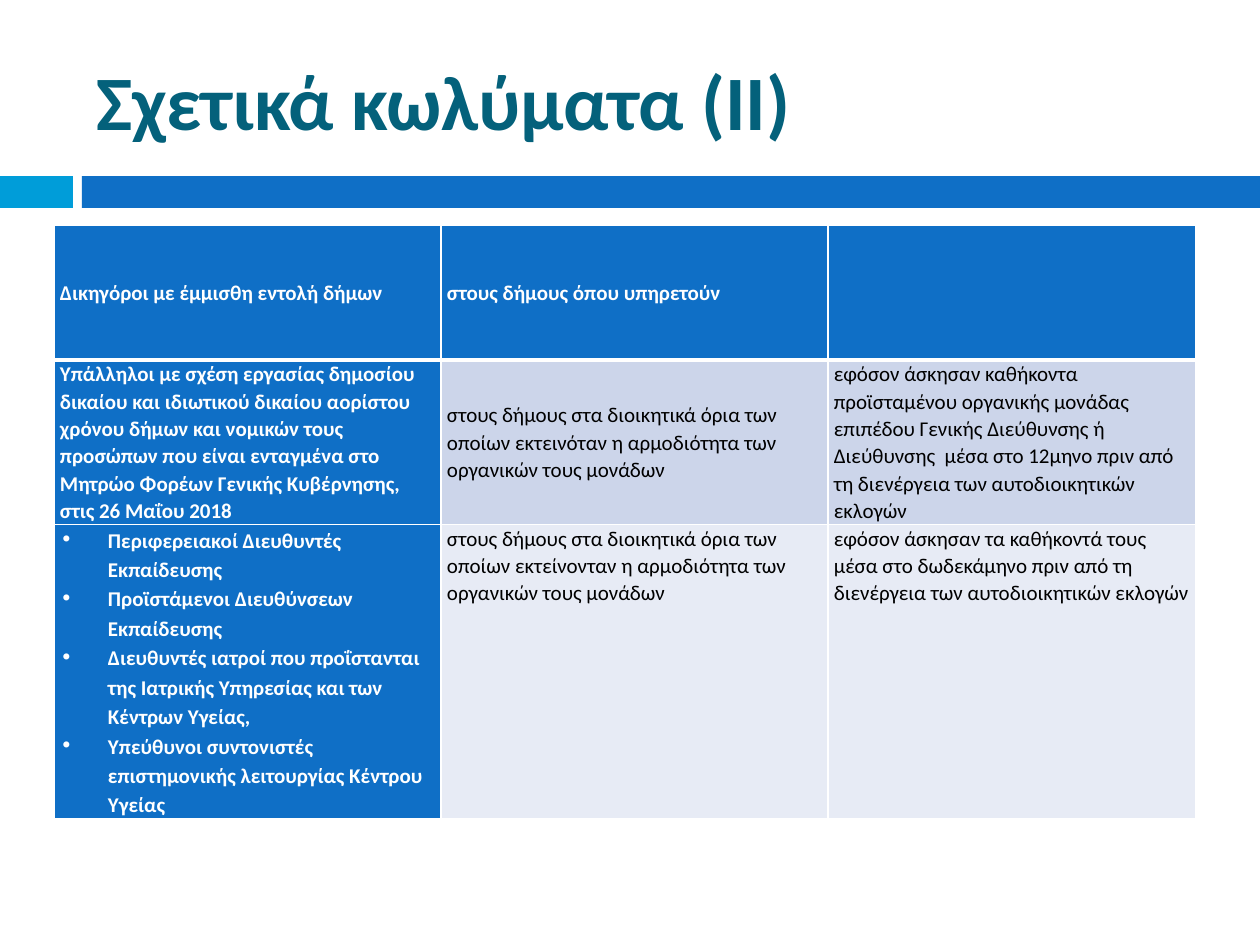
"""Build the slide on eligibility restrictions with its three-column table."""
import dataclasses
import typing

import lxml.etree
import pptx
import pptx.dml.color
import pptx.enum.shapes
import pptx.enum.text
import pptx.oxml.ns
import pptx.util

PX_PER_INCH = 126
FONT = "Calibri"
COLORS = {
    "title": "04617B", "accent": "009DD9", "main": "0F6FC6", "white": "FFFFFF",
    "text": "000000", "band": "CCD5EA", "light": "E7EBF5",
}
ANCHOR = pptx.enum.text.MSO_ANCHOR
COLUMNS = (387, 387, 368)
ROWS = (135, 161, 290)
INSET = 6
INDENT = 48


@dataclasses.dataclass(frozen=True)
class Bar:
    left: int
    width: int
    color: str


@dataclasses.dataclass(frozen=True)
class Entry:
    lines: tuple[str, ...]
    fill: str = "main"
    color: str = "white"
    bold: bool = True
    middle: bool = False
    bullets: bool = False


BARS = (Bar(0, 73, "accent"), Bar(82, 1178, "main"))
ENTRIES = (
    (
        Entry(("Δικηγόροι με έμμισθη εντολή δήμων",), middle=True),
        Entry(("στους δήμους όπου υπηρετούν",), middle=True),
        Entry(()),
    ),
    (
        Entry(("Υπάλληλοι με σχέση εργασίας δημοσίου δικαίου και ιδιωτικού δικαίου "
               "αορίστου χρόνου δήμων και νομικών τους προσώπων που είναι ενταγμένα στο "
               "Μητρώο Φορέων Γενικής Κυβέρνησης, στις 26 Μαΐου 2018",)),
        Entry(("στους δήμους στα διοικητικά όρια των οποίων εκτεινόταν η αρμοδιότητα "
               "των οργανικών τους μονάδων",), "band", "text", False, middle=True),
        Entry(("εφόσον άσκησαν καθήκοντα προϊσταμένου οργανικής μονάδας επιπέδου "
               "Γενικής Διεύθυνσης ή Διεύθυνσης  μέσα στο 12μηνο πριν από τη διενέργεια "
               "των αυτοδιοικητικών εκλογών",), "band", "text", False),
    ),
    (
        Entry(("Περιφερειακοί Διευθυντές Εκπαίδευσης",
               "Προϊστάμενοι Διευθύνσεων Εκπαίδευσης",
               "Διευθυντές ιατροί που προΐστανται της Ιατρικής Υπηρεσίας και των "
               "Κέντρων Υγείας,",
               "Υπεύθυνοι συντονιστές επιστημονικής λειτουργίας Κέντρου Υγείας"),
              bullets=True),
        Entry(("στους δήμους στα διοικητικά όρια των οποίων εκτείνονταν η αρμοδιότητα "
               "των οργανικών τους μονάδων",), "light", "text", False),
        Entry(("εφόσον άσκησαν τα καθήκοντά τους μέσα στο δωδεκάμηνο πριν από τη "
               "διενέργεια των αυτοδιοικητικών εκλογών",), "light", "text", False),
    ),
)


def px(length: int) -> pptx.util.Emu:
    return pptx.util.Emu(round(length * 914400 / PX_PER_INCH))


def rgb(name: str) -> pptx.dml.color.RGBColor:
    return pptx.dml.color.RGBColor.from_string(COLORS[name])


def add_element(parent: typing.Any, tag: str, **attributes: str) -> typing.Any:
    return lxml.etree.SubElement(parent, pptx.oxml.ns.qn(tag), attributes)


def add_span(para: typing.Any, text: str, size: int, color: str, bold: bool) -> None:
    span = para.add_run()
    span.text = text
    span.font.name = FONT
    span.font.size = pptx.util.Pt(size)
    span.font.bold = bold
    span.font.color.rgb = rgb(color)


def add_title(page: typing.Any, text: str) -> None:
    title = page.shapes.title
    title.left, title.top, title.width, title.height = map(px, (84, 32, 1124, 136))
    title.text_frame.vertical_anchor = ANCHOR.MIDDLE
    para = title.text_frame.paragraphs[0]
    para.alignment = pptx.enum.text.PP_ALIGN.LEFT
    add_span(para, text, 44, "title", True)


def add_bar(page: typing.Any, bar: Bar) -> None:
    shape = page.shapes.add_shape(
        pptx.enum.shapes.MSO_SHAPE.RECTANGLE, px(bar.left), px(176), px(bar.width), px(32))
    shape.shadow.inherit = False
    shape.fill.solid()
    shape.fill.fore_color.rgb = rgb(bar.color)
    shape.line.fill.background()


def add_borders(cell: typing.Any, row: int) -> None:
    thick = {0: "a:lnB", 1: "a:lnT"}.get(row)
    for side in ("a:lnL", "a:lnR", "a:lnT", "a:lnB"):
        width = pptx.util.Pt(3 if side == thick else 1)
        line = add_element(cell._tc.get_or_add_tcPr(), side, w=str(int(width)))
        add_element(add_element(line, "a:solidFill"), "a:srgbClr", val=COLORS["white"])


def add_bullet(para: typing.Any) -> None:
    properties = para._p.get_or_add_pPr()
    properties.set("marL", str(int(px(INDENT))))
    properties.set("indent", str(-int(px(INDENT))))
    add_element(add_element(properties, "a:buClr"), "a:srgbClr", val=COLORS["white"])
    add_element(properties, "a:buChar", char="∙")


def fill_cell(cell: typing.Any, entry: Entry, row: int) -> None:
    add_borders(cell, row)
    cell.fill.solid()
    cell.fill.fore_color.rgb = rgb(entry.fill)
    cell.margin_left = cell.margin_right = px(INSET)
    cell.margin_top = cell.margin_bottom = 0
    cell.vertical_anchor = ANCHOR.MIDDLE if entry.middle else ANCHOR.TOP
    frame = cell.text_frame
    for number, line in enumerate(entry.lines):
        para = frame.add_paragraph() if number else frame.paragraphs[0]
        para.line_spacing = 1.15 if entry.bullets else 1.07
        if entry.bullets:
            add_bullet(para)
        add_span(para, line, 12, entry.color, entry.bold)


def add_restrictions(page: typing.Any) -> None:
    table = page.shapes.add_table(
        len(ROWS), len(COLUMNS), px(54), px(225), px(sum(COLUMNS)), px(sum(ROWS))).table
    table.horz_banding = False
    for column, width in zip(table.columns, COLUMNS):
        column.width = px(width)
    for row, (height, entries) in enumerate(zip(ROWS, ENTRIES)):
        table.rows[row].height = px(height)
        for column, entry in enumerate(entries):
            fill_cell(table.cell(row, column), entry, row)


def main() -> None:
    deck = pptx.Presentation()
    deck.slide_width, deck.slide_height = px(1260), px(945)
    page = deck.slides.add_slide(deck.slide_layouts.get_by_name("Title Only"))
    for bar in BARS:
        add_bar(page, bar)
    add_title(page, "Σχετικά κωλύματα (ΙΙ)")
    add_restrictions(page)
    deck.save("out.pptx")


if __name__ == "__main__":
    main()
